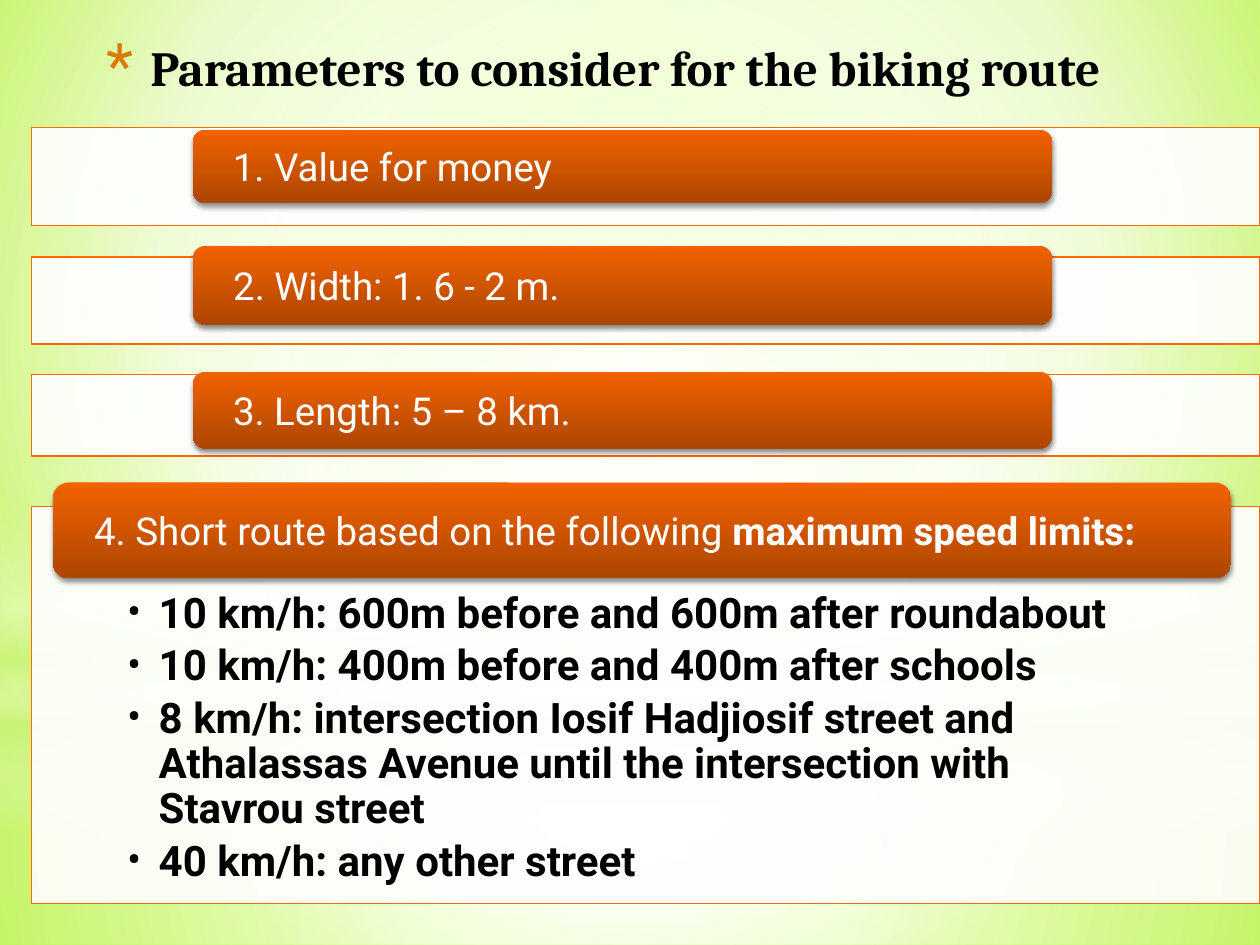
from lxml import etree
from pptx import Presentation
from pptx.dml.color import RGBColor
from pptx.enum.shapes import MSO_SHAPE
from pptx.enum.text import MSO_ANCHOR, PP_ALIGN
from pptx.oxml import parse_xml
from pptx.oxml.ns import nsdecls, qn
from pptx.util import Inches, Pt

RECTANGLE, ROUNDED, OVAL = MSO_SHAPE.RECTANGLE, MSO_SHAPE.ROUNDED_RECTANGLE, MSO_SHAPE.OVAL
TOP, MIDDLE = MSO_ANCHOR.TOP, MSO_ANCHOR.MIDDLE
RIGHT, LEFT = PP_ALIGN.RIGHT, PP_ALIGN.LEFT

THEME = {
    "title_font": "Cambria", "body_font": "Roboto",
    "title_size": 28, "bar_size": 22, "list_size": 24,
    "white": "FFFFFF", "black": "000000", "lime": "CAF278",
    "frame": "FF6700", "asterisk": "D77C01",
    "bar": [(0, "F26200", 100), (100, "AD4600", 100)],
    "background": [(0, "CAFF60", 100), (60, "F7FFE7", 100), (100, "B7FF29", 100)],
}
WHITE, LIME = THEME["white"], THEME["lime"]

presentation = Presentation()
presentation.slide_width, presentation.slide_height = Inches(10), Inches(7.5)
COLUMN = presentation.slide_width // 1000
ROW = presentation.slide_height // 750
slide = presentation.slides.add_slide(presentation.slide_layouts[6])


def paint(solid_fill, stops, focus=None):
    stop_xml = "".join(
        f'<a:gs pos="{position * 1000}"><a:srgbClr val="{color}">'
        f'<a:alpha val="{opacity * 1000}"/></a:srgbClr></a:gs>'
        for position, color, opacity in stops)
    direction = '<a:lin ang="5400000" scaled="0"/>'
    if focus:
        left, top, right, bottom = [share * 1000 for share in focus]
        direction = (f'<a:path path="circle"><a:fillToRect l="{left}" t="{top}" '
                     f'r="{right}" b="{bottom}"/></a:path>')
    gradient = parse_xml(f'<a:gradFill {nsdecls("a")} rotWithShape="1">'
                         f'<a:gsLst>{stop_xml}</a:gsLst>{direction}</a:gradFill>')
    solid_fill.getparent().replace(solid_fill, gradient)


def add_panel(kind, box, stops, focus=None):
    left, top, width, height = box
    shape = slide.shapes.add_shape(kind, left * COLUMN, top * ROW, width * COLUMN, height * ROW)
    shape.shadow.inherit = False
    shape.line.fill.background()
    shape.fill.solid()
    paint(shape.element.spPr.find(qn("a:solidFill")), stops, focus)
    return shape


slide.background.fill.solid()
paint(slide.element.xpath(".//p:bgPr/a:solidFill")[0], THEME["background"], (20, 10, 20, 60))

CENTER = (50, 50, 50, 50)
for kind, box, stops, focus in [
    (RECTANGLE, (0, 558, 1000, 192), [(0, WHITE, 91), (37, WHITE, 76), (100, LIME, 79)], CENTER),
    (RECTANGLE, (0, 0, 1000, 558), [(0, WHITE, 89), (48, WHITE, 62), (100, LIME, 79)], CENTER),
    (RECTANGLE, (0, 412, 1000, 250), [(0, WHITE, 0), (29, WHITE, 30), (45, LIME, 40),
                                      (55, WHITE, 26), (65, LIME, 60), (100, WHITE, 0)], None),
    (OVAL, (0, 175, 1000, 558), [(0, WHITE, 100), (56, WHITE, 0)], CENTER),
]:
    add_panel(kind, box, stops, focus)

texts = []
title = slide.shapes.add_textbox(-17 * COLUMN, 25 * ROW, 900 * COLUMN, 67 * ROW)
texts.append((title, TOP, (10, 5, 10, 5), RIGHT, "title", "black",
              [[("Parameters to consider for the biking route", True)]], ("*", 35, 128)))

limits = [
    "10 km/h: 600m before and 600m after roundabout",
    "10 km/h: 400m before and 400m after schools",
    "8 km/h: intersection Iosif Hadjiosif street and Athalassas Avenue "
    "until the intersection with Stavrou street",
    "40 km/h: any other street",
]
sections = [
    (101, 78, (153, 103, 682, 58), [("1. Value for money", False)], []),
    (204, 69, (153, 195, 682, 63), [("2. Width: 1. 6 - 2 m.", False)], []),
    (297, 65, (153, 295, 682, 61), [("3. Length: 5 – 8 km.", False)], []),
    (402, 315, (42, 383, 935, 76), [("4. Short route based on the following ", False),
                                    ("maximum speed limits:", True)], limits),
]
for frame_top, frame_height, bar_box, heading, items in sections:
    frame = add_panel(RECTANGLE, (25, frame_top, 975, frame_height),
                      [(0, WHITE, 90), (100, WHITE, 90)])
    frame.line.color.rgb = RGBColor.from_string(THEME["frame"])
    frame.line.width = Pt(0.75)
    if items:
        texts.append((frame, TOP, (76, 68, 76, 19), LEFT, "list", "black",
                      [[(item, True)] for item in items], ("•", 25, 100)))
    bar = add_panel(ROUNDED, bar_box, THEME["bar"])
    bar.element.spPr.find(qn("a:effectLst")).append(parse_xml(
        f'<a:outerShdw {nsdecls("a")} blurRad="{Pt(3.1)}" dist="{Pt(1.8)}" dir="5400000" '
        'rotWithShape="0"><a:srgbClr val="000000"><a:alpha val="45000"/></a:srgbClr></a:outerShdw>'))
    texts.append((bar, MIDDLE, (29, 0, 29, 0), LEFT, "bar", "white", [heading], None))

for shape, anchor, insets, alignment, role, color, lines, bullet in texts:
    frame = shape.text_frame
    frame.word_wrap = True
    frame.vertical_anchor = anchor
    frame.margin_left, frame.margin_top, frame.margin_right, frame.margin_bottom = [
        inset * COLUMN for inset in insets]
    for number, runs in enumerate(lines):
        paragraph = frame.add_paragraph() if number else frame.paragraphs[0]
        paragraph.alignment = alignment
        if role == "list":
            paragraph.line_spacing = 0.9
            paragraph.space_after = Pt(4)
        if bullet:
            symbol, indent, percent = bullet
            properties = paragraph._p.get_or_add_pPr()
            properties.set("marL", str(indent * COLUMN))
            properties.set("indent", str(-indent * COLUMN))
            if role == "title":
                bullet_color = etree.SubElement(properties, qn("a:buClr"))
                etree.SubElement(bullet_color, qn("a:srgbClr"), val=THEME["asterisk"])
            etree.SubElement(properties, qn("a:buSzPct"), val=str(percent * 1000))
            etree.SubElement(properties, qn("a:buFont"), typeface=THEME["body_font"])
            etree.SubElement(properties, qn("a:buChar"), char=symbol)
        for text, bold in runs:
            run = paragraph.add_run()
            run.text = text
            run.font.name = THEME["title_font" if role == "title" else "body_font"]
            run.font.size = Pt(THEME[role + "_size"])
            run.font.bold = bold
            run.font.color.rgb = RGBColor.from_string(THEME[color])

presentation.save("out.pptx")
